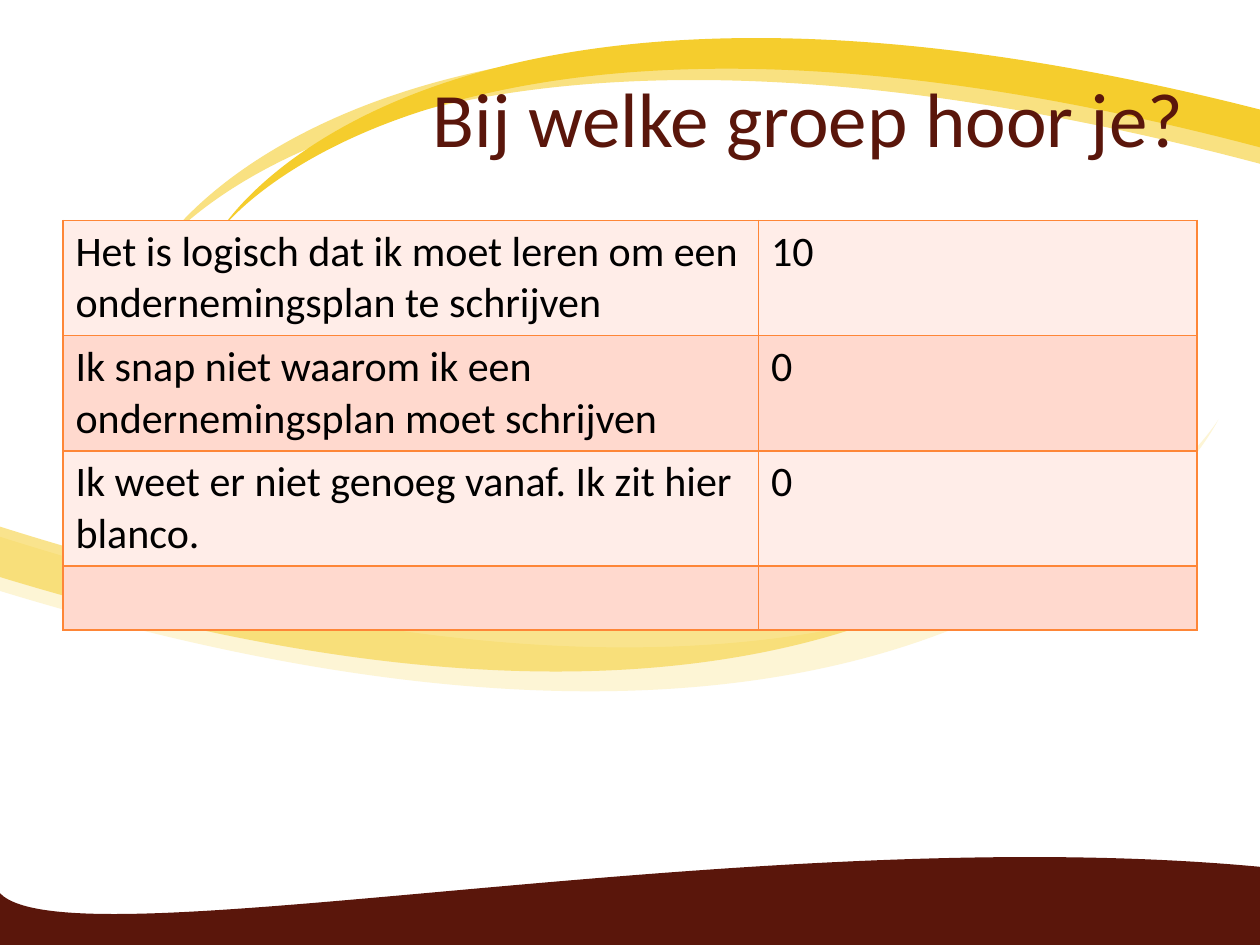
from dataclasses import dataclass

from lxml import etree
from pptx import Presentation
from pptx import util as u
from pptx.dml.color import RGBColor
from pptx.enum import text
from pptx.oxml import ns


@dataclass(frozen=True)
class Theme:
    font: str = "Calibri"
    head: int = 44
    body: int = 24
    brown: str = "5A160B"
    gold: str = "F5CD2D"
    pale: str = "F9E181"
    cream: str = "FDF5D5"
    ink: str = "000000"
    edge: str = "FE8637"
    bands: tuple = ("FFEDE8", "FFD9CE")


class Deck:
    def __init__(self, theme):
        self.theme = theme
        self.file = Presentation()
        self.file.slide_width = u.Inches(10)
        self.file.slide_height = u.Inches(7.5)
        self.slide = self.file.slides.add_slide(self.file.slide_layouts[5])

    def style(self, frame, size, color):
        for para in frame.paragraphs:
            for run in para.runs:
                run.font.name = self.theme.font
                run.font.size = u.Pt(size)
                run.font.color.rgb = RGBColor.from_string(color)

    def curve(self, form, count):
        lines = list(form._element.iter(ns.qn("a:lnTo")))
        for i in range(0, 3 * count, 3):
            arc = etree.Element(ns.qn("a:cubicBezTo"))
            lines[i].addprevious(arc)
            for line in lines[i:i + 3]:
                arc.append(line[0])
                line.getparent().remove(line)

    def shape(self, points, curves, color, alpha=None):
        first, *rest = [(u.Inches(x), u.Inches(y)) for x, y in points]
        pen = self.slide.shapes.build_freeform(*first, scale=1.0)
        pen.add_line_segments(rest, close=True)
        form = pen.convert_to_shape()
        self.curve(form, curves)
        form.shadow.inherit = False
        form.line.fill.background()
        form.fill.solid()
        form.fill.fore_color.rgb = RGBColor.from_string(color)
        if alpha is not None:
            tone = form.fill._xPr.find(".//" + ns.qn("a:srgbClr"))
            etree.SubElement(tone, ns.qn("a:alpha"), val=str(alpha * 1000))

    def swoosh(self, start, out, tip, back, end, color, alpha=None):
        mid = (start[0], end[1] + (start[1] - end[1]) * 0.15)
        points = [start, out, tip, tip, tip, back, end, end, mid, start]
        self.shape(points, 3, color, alpha)

    def title(self, words, left, top, width, height):
        box = self.slide.shapes.title
        box.left, box.top = u.Inches(left), u.Inches(top)
        box.width, box.height = u.Inches(width), u.Inches(height)
        frame = box.text_frame
        frame.text = words
        frame.vertical_anchor = text.MSO_ANCHOR.MIDDLE
        frame.paragraphs[0].alignment = text.PP_ALIGN.RIGHT
        self.style(frame, self.theme.head, self.theme.brown)
        tree = self.slide.shapes._spTree
        tree.remove(box._element)
        tree.append(box._element)

    def border(self, cell):
        props = cell._tc.get_or_add_tcPr()
        for side in ("lnL", "lnR", "lnT", "lnB"):
            line = etree.SubElement(props, ns.qn("a:" + side), w=str(u.Pt(1)))
            fill = etree.SubElement(line, ns.qn("a:solidFill"))
            etree.SubElement(fill, ns.qn("a:srgbClr"), val=self.theme.edge)

    def table(self, rows, left, top, widths, heights):
        frame = self.slide.shapes.add_table(
            len(rows), len(widths), u.Inches(left), u.Inches(top),
            u.Inches(sum(widths)), u.Inches(sum(heights)))
        grid = frame.table
        grid.first_row = grid.horz_banding = False
        for col, width in zip(grid.columns, widths):
            col.width = u.Inches(width)
        for r, (row, height) in enumerate(zip(rows, heights)):
            grid.rows[r].height = u.Inches(height)
            for c, words in enumerate(row):
                cell = grid.cell(r, c)
                if words:
                    cell.text_frame.text = words
                    self.style(cell.text_frame, self.theme.body, self.theme.ink)
                self.border(cell)
                cell.fill.solid()
                cell.fill.fore_color.rgb = RGBColor.from_string(self.theme.bands[r % 2])


def main():
    theme = Theme()
    deck = Deck(theme)
    wave = [(0, 7.09), (0.56, 7.67), (5.96, 6.5), (10, 6.88),
            (10, 7.09), (10.01, 7.32), (10.01, 7.54), (0, 7.51), (0, 7.09)]
    deck.shape(wave, 2, theme.brown)
    deck.swoosh((0, 4.26), (7.63, 6.68), (9.67, 3.33), (7.82, 7.08), (0, 4.69), theme.cream)
    deck.swoosh((10, 1.3), (3.09, -0.53), (1.25, 2), (2.92, -0.83), (10, 0.97), theme.pale)
    deck.swoosh((10, 1.17), (3.49, -0.55), (1.75, 1.83), (3.33, -0.83), (10, 0.87), theme.gold)
    deck.swoosh((0, 4.18), (7.2, 6.46), (9.11, 3.3), (7.37, 6.83), (0, 4.58), theme.gold, 54)
    deck.title("Bij welke groep hoor je?", 0.5, 0.3, 9, 1.25)
    rows = [
        ("Het is logisch dat ik moet leren om een ondernemingsplan te schrijven", "10"),
        ("Ik snap niet waarom ik een ondernemingsplan moet schrijven", "0"),
        ("Ik weet er niet genoeg vanaf. Ik zit hier blanco.", "0"),
        ("", ""),
    ]
    deck.table(rows, 0.5, 1.75, (5.52, 3.48), (0.91, 0.91, 0.91, 0.51))
    deck.file.save("out.pptx")


if __name__ == "__main__":
    main()
